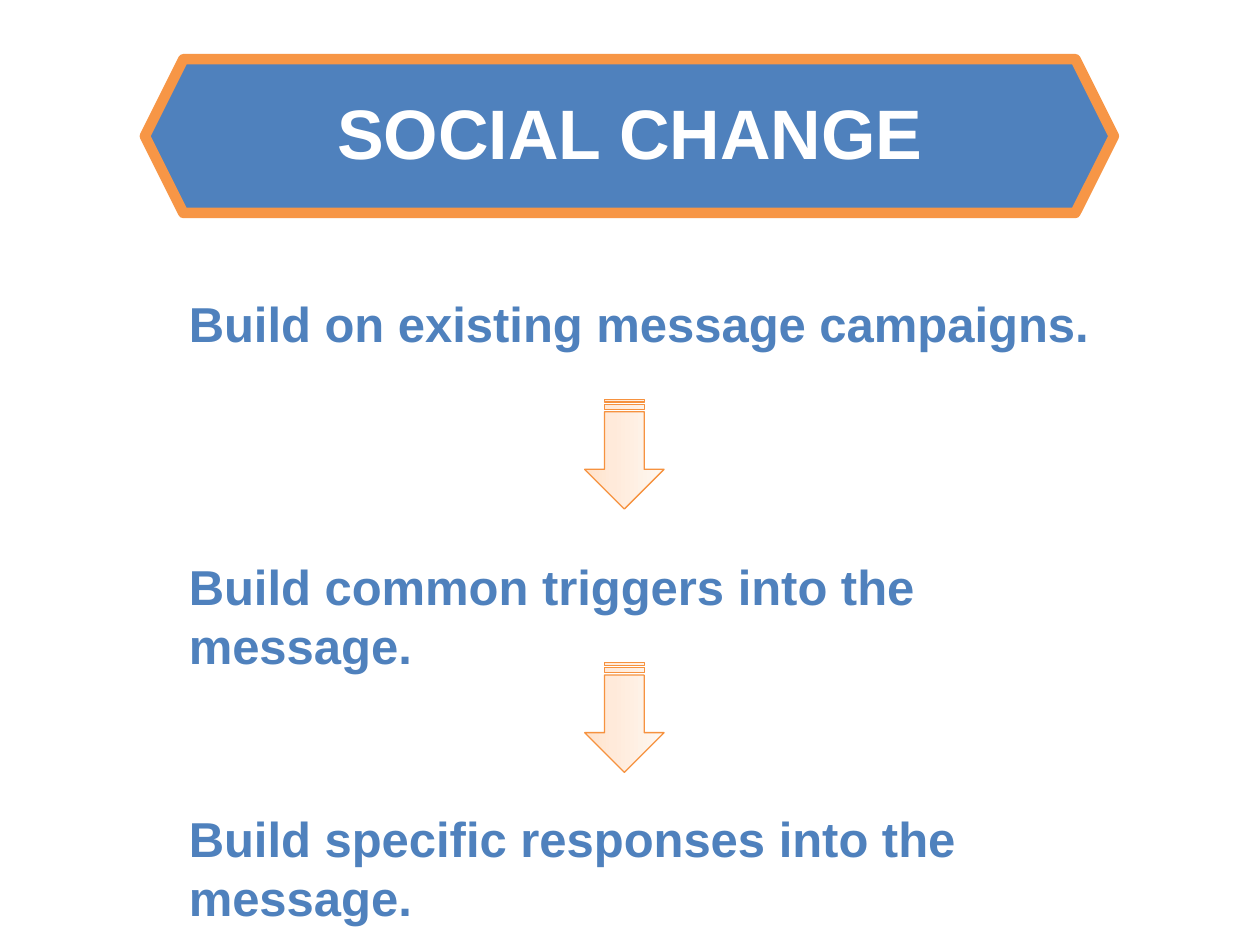
"""Build the Social Change slide: a title banner and three steps joined by arrows."""
from copy import deepcopy

from pptx import Presentation
from pptx.dml.color import RGBColor
from pptx.enum.shapes import MSO_SHAPE
from pptx.enum.text import PP_ALIGN
from pptx.util import Inches, Pt

TITLE = "SOCIAL CHANGE"
STEPS = [
    ("Build on existing message campaigns.", 2.28),
    ("Build common triggers into the message.", 4.37),
    ("Build specific responses into the message.", 6.37),
]
COLORS = {"blue": "4F81BD", "orange": "F79646", "edge": "F6923F", "white": "FFFFFF"}
ARROW_STOPS = [(0, "FFE2CA"), (0.35, "FFEADA"), (1, "FEF8F1")]
ARROW_LEFT, ARROW_GAP, ARROW_W, ARROW_H = 4.52, 1.01, 0.87, 0.63
TITLE_FORMAT = {"size": Pt(40), "name": "Arial", "bold": True}
STEP_FORMAT = {**TITLE_FORMAT, "size": Pt(28)}


def rgb(name):
    return RGBColor.from_string(COLORS[name])


def add_outlined(s, kind, box, line, width):
    sp = s.shapes.add_shape(kind, *map(Inches, box))
    sp.shadow.inherit = False
    sp.line.color.rgb = rgb(line)
    sp.line.width = Pt(width)
    return sp


def add_banner(s):
    sp = add_outlined(s, MSO_SHAPE.HEXAGON, (1.15, 0.47, 7.69, 1.22), "orange", 6)
    sp.fill.solid()
    sp.fill.fore_color.rgb = rgb("blue")


def add_text(s, text, box, color, formats, align=PP_ALIGN.LEFT):
    tf = s.shapes.add_textbox(*map(Inches, box)).text_frame
    tf.word_wrap = True
    p = tf.paragraphs[0]
    p.alignment = align
    r = p.add_run()
    r.text = text
    r.font.color.rgb = rgb(color)
    for key, value in formats.items():
        setattr(r.font, key, value)


def add_arrow(s, top):
    box = (ARROW_LEFT, top, ARROW_W, ARROW_H)
    sp = add_outlined(s, MSO_SHAPE.STRIPED_RIGHT_ARROW, box, "edge", 0.75)
    sp.rotation = 90
    sp.fill.gradient()
    sp.fill.gradient_angle = 90
    stops = sp.fill._fill._gradFill.gsLst
    stops.append(deepcopy(stops[0]))
    for stop, (position, color) in zip(sp.fill.gradient_stops, ARROW_STOPS):
        stop.position = position
        stop.color.rgb = RGBColor.from_string(color)


def main():
    prs = Presentation()
    prs.slide_width, prs.slide_height = Inches(10), Inches(7.5)
    s = prs.slides.add_slide(prs.slide_layouts[6])
    add_banner(s)
    add_text(s, TITLE, (0, 0.66, 10, 0.77), "white", TITLE_FORMAT, PP_ALIGN.CENTER)
    for text, top in STEPS:
        add_text(s, text, (1.4, top, 7.43, 0.57), "blue", STEP_FORMAT)
    for _, top in STEPS[:-1]:
        add_arrow(s, top + ARROW_GAP)
    prs.save("out.pptx")


if __name__ == "__main__":
    main()
